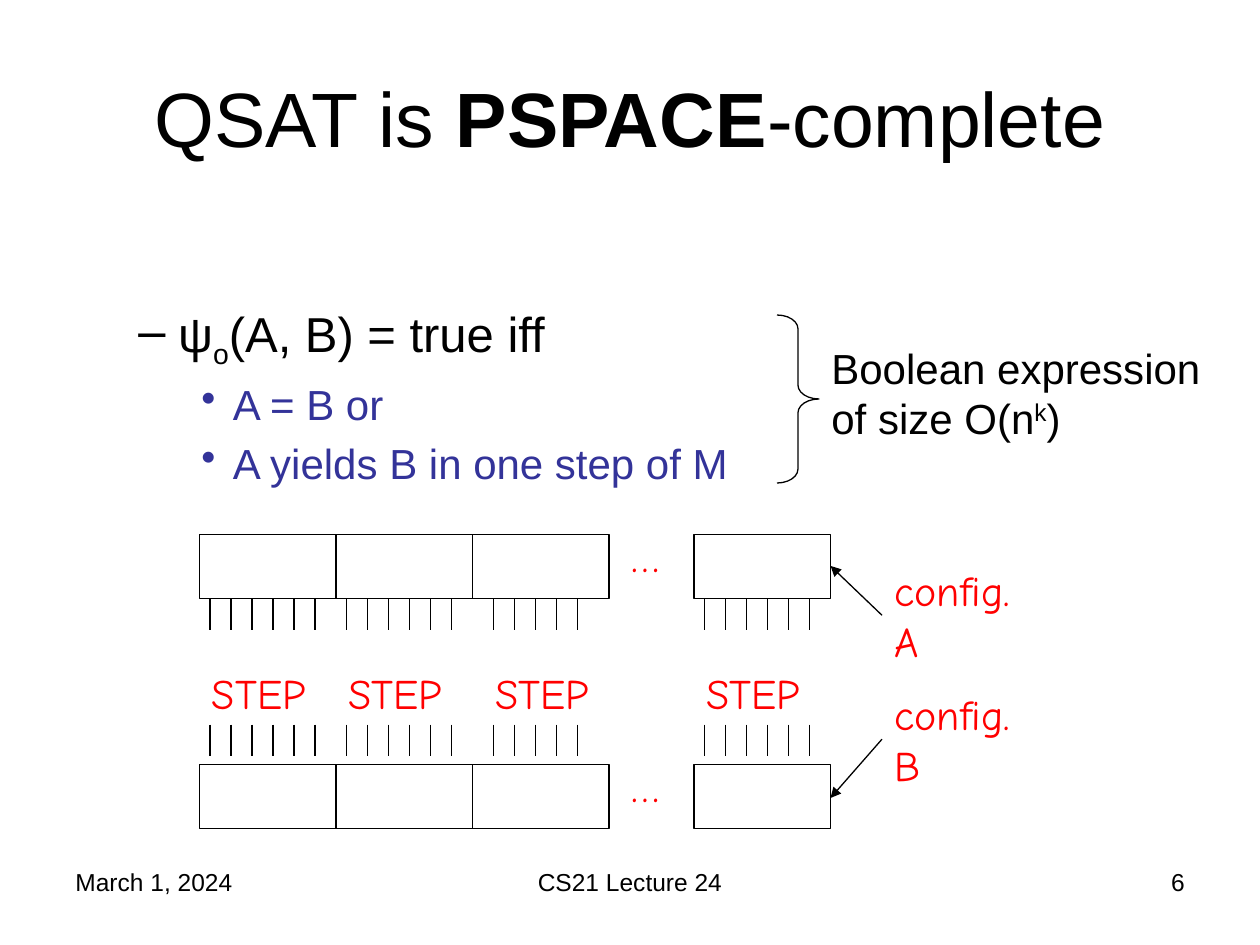
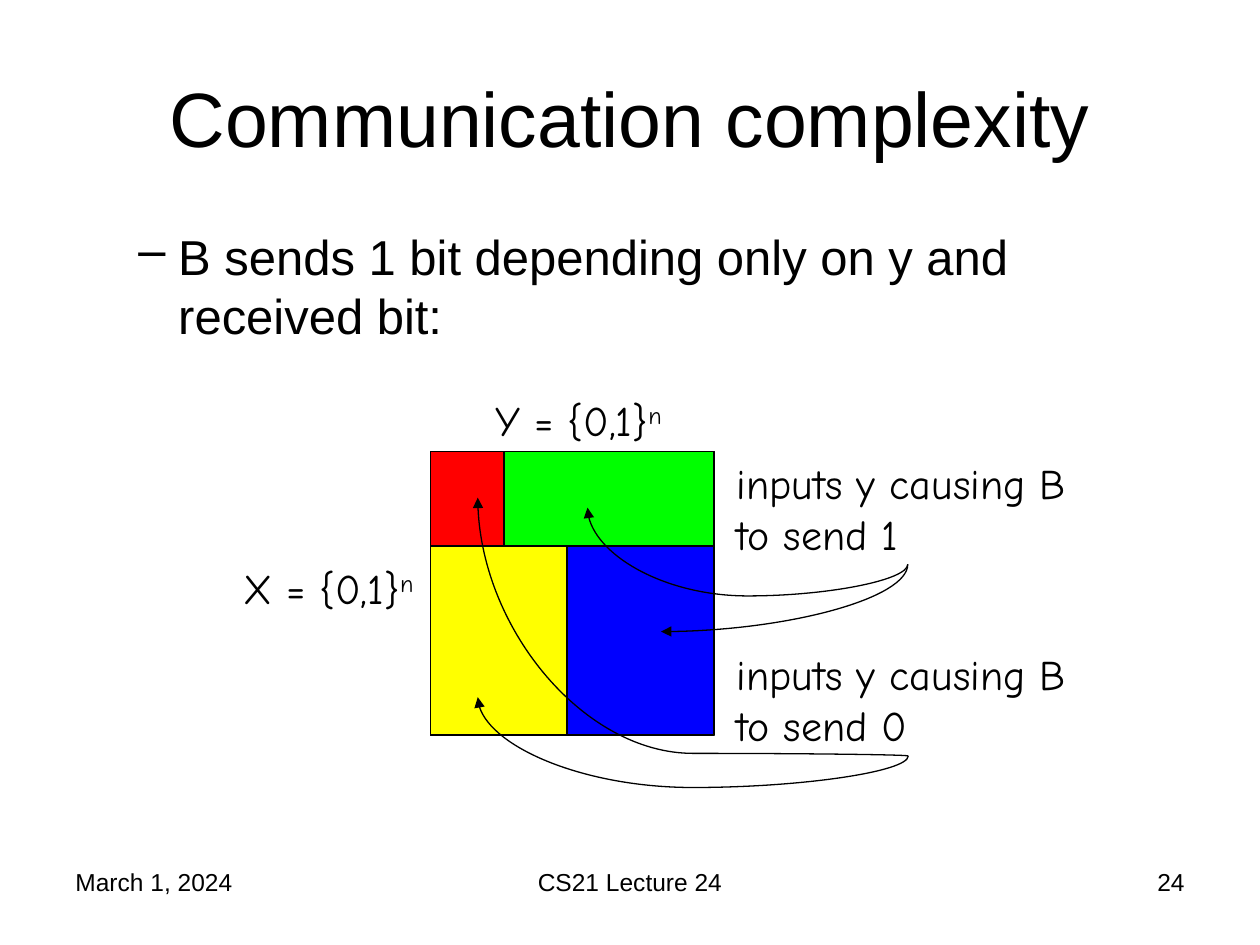
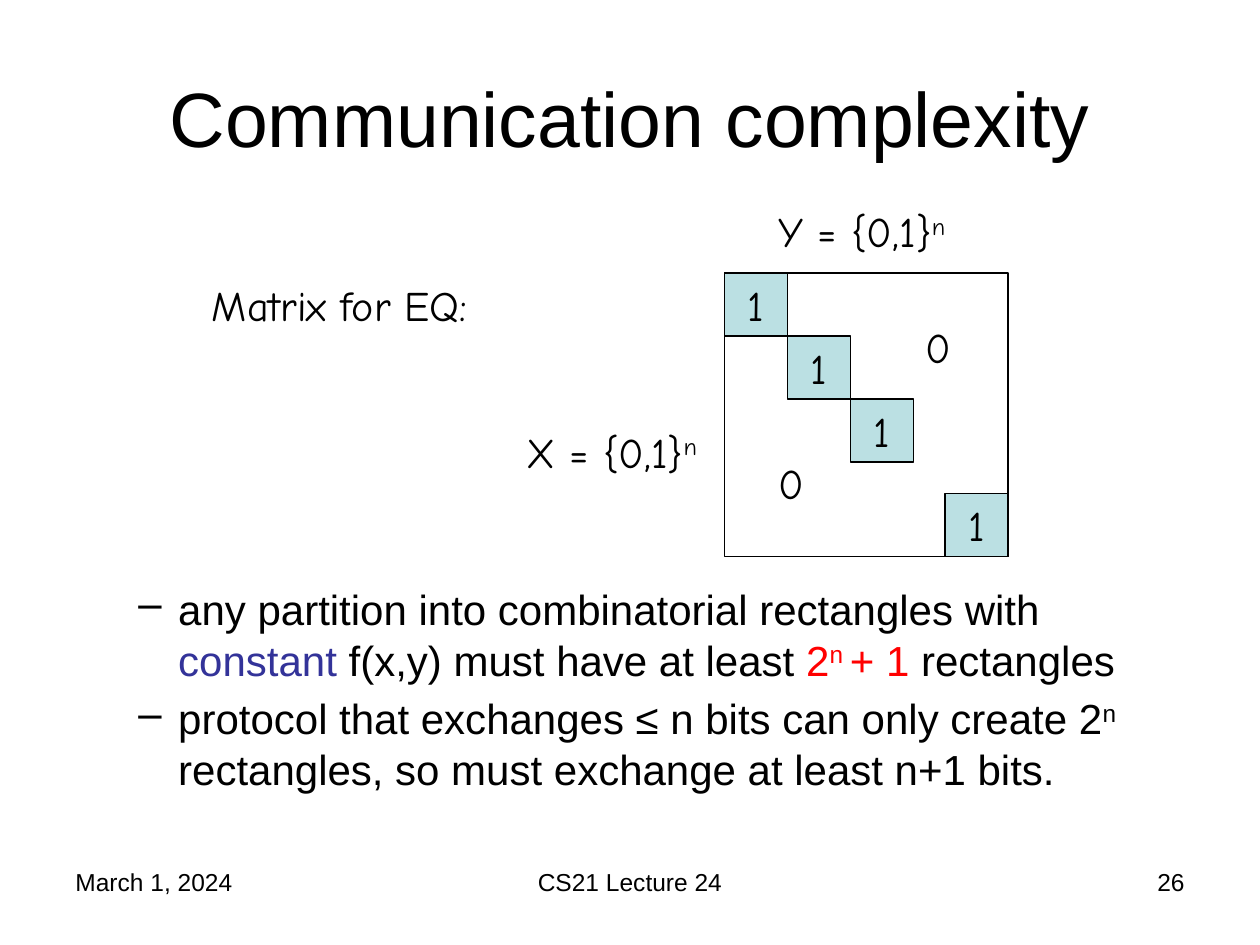
from typing import NamedTuple, Optional

import lxml.etree
import pptx
import pptx.dml.color
import pptx.enum.shapes
import pptx.enum.text
import pptx.oxml.ns
import pptx.util

EMU_PER_PX = 7620
SLIDE_WIDTH, SLIDE_HEIGHT = 1200, 900
TITLE_ONLY_LAYOUT = 5

ARIAL = "Arial"
COMIC = "Comic Neue"
BLACK = "000000"
RED = "FF0000"
GREEN = "00FF00"
YELLOW = "FFFF00"
BLUE = "0000FF"
INDIGO = "333399"
PALE_TEAL = "BBE0E3"

ALIGN = pptx.enum.text.PP_ALIGN
ANCHOR = pptx.enum.text.MSO_ANCHOR
SHAPE = pptx.enum.shapes.MSO_SHAPE
CONNECTOR = pptx.enum.shapes.MSO_CONNECTOR
qn = pptx.oxml.ns.qn


class Frame(NamedTuple):
    left: int
    top: int
    width: int
    height: int


class Point(NamedTuple):
    x: int
    y: int


class Run(NamedTuple):
    text: str
    color: str = BLACK
    bold: bool = False
    baseline: int = 0


class Bullet(NamedTuple):
    mark: str
    margin: int
    hanging: int


class Item(NamedTuple):
    bullet: Bullet
    size: int
    runs: list[Run]


class Footer(NamedTuple):
    frame: Frame
    align: ALIGN
    text: str


class TapeCell(NamedTuple):
    left: int
    step_left: int
    tick_count: int


class Curve(NamedTuple):
    begin: Point
    end: Point
    preset: str
    bend: Optional[int] = None


DASH = Bullet("–", 98, 38)
DOT = Bullet("•", 150, 30)
TITLE_FRAME = Frame(60, 36, 1080, 150)


def px(length: int) -> pptx.util.Emu:
    return pptx.util.Emu(length * EMU_PER_PX)


def rgb(color: str) -> pptx.dml.color.RGBColor:
    return pptx.dml.color.RGBColor.from_string(color)


def write(paragraph, text: str, *, size: int = 24, font: str = ARIAL, color: str = BLACK,
          bold: bool = False, baseline: int = 0) -> None:
    run = paragraph.add_run()
    run.text = text
    run.font.size = pptx.util.Pt(size)
    run.font.name = font
    run.font.bold = bold
    run.font.color.rgb = rgb(color)
    if baseline:
        run._r.get_or_add_rPr().set("baseline", str(baseline * 1000))


def write_runs(paragraph, runs: list[Run], *, size: int = 24, font: str = ARIAL) -> None:
    for run in runs:
        write(paragraph, run.text, size=size, font=font, color=run.color,
              bold=run.bold, baseline=run.baseline)


def add_text_frame(slide, frame: Frame):
    text_frame = slide.shapes.add_textbox(*map(px, frame)).text_frame
    text_frame.word_wrap = True
    return text_frame


def add_label(slide, frame: Frame, runs: list[Run], *, size: int = 24, font: str = COMIC,
              align: ALIGN = ALIGN.LEFT) -> None:
    paragraph = add_text_frame(slide, frame).paragraphs[0]
    paragraph.alignment = align
    write_runs(paragraph, runs, size=size, font=font)


def set_bullet(paragraph, bullet: Bullet) -> None:
    properties = paragraph._p.get_or_add_pPr()
    properties.set("marL", str(px(bullet.margin)))
    properties.set("indent", str(px(-bullet.hanging)))
    lxml.etree.SubElement(properties, qn("a:buChar")).set("char", bullet.mark)


def add_body(slide, frame: Frame, items: list[Item]) -> None:
    text_frame = add_text_frame(slide, frame)
    for index, item in enumerate(items):
        paragraph = text_frame.add_paragraph() if index else text_frame.paragraphs[0]
        if index:
            paragraph.space_before = pptx.util.Pt(item.size * 0.2)
        set_bullet(paragraph, item.bullet)
        write_runs(paragraph, item.runs, size=item.size)


def add_outline(slide, frame: Frame, *, fill: Optional[str] = None, kind: SHAPE = SHAPE.RECTANGLE):
    shape = slide.shapes.add_shape(kind, *map(px, frame))
    shape.shadow.inherit = False
    if fill:
        shape.fill.solid()
        shape.fill.fore_color.rgb = rgb(fill)
    else:
        shape.fill.background()
    shape.line.color.rgb = rgb(BLACK)
    shape.line.width = pptx.util.Pt(0.75)
    return shape


def add_line(slide, begin: Point, end: Point, *, kind: CONNECTOR = CONNECTOR.STRAIGHT,
             arrow: bool = False):
    connector = slide.shapes.add_connector(kind, *map(px, begin), *map(px, end))
    connector.line.color.rgb = rgb(BLACK)
    connector.line.width = pptx.util.Pt(0.75)
    if arrow:
        line = connector.line._get_or_add_ln()
        lxml.etree.SubElement(line, qn("a:tailEnd")).set("type", "triangle")
    lxml.etree.SubElement(connector._element.spPr, qn("a:effectLst"))
    return connector


def add_curve(slide, curve: Curve) -> None:
    begin, end = curve.begin, curve.end
    width, height = abs(end.y - begin.y), abs(end.x - begin.x)
    left = (begin.x + end.x - width) // 2
    top = (begin.y + end.y - height) // 2
    connector = add_line(slide, Point(left, top), Point(left + width, top + height),
                         kind=CONNECTOR.CURVE, arrow=True)
    properties = connector._element.spPr
    transform = properties.find(qn("a:xfrm"))
    upward = end.y < begin.y
    transform.set("rot", str((270 if upward else 90) * 60000))
    if upward:
        transform.set("flipV", "1")
    geometry = properties.find(qn("a:prstGeom"))
    geometry.set("prst", curve.preset)
    if curve.bend is not None:
        guide = lxml.etree.SubElement(geometry.find(qn("a:avLst")), qn("a:gd"))
        guide.set("name", "adj1")
        guide.set("fmla", f"val {curve.bend}")


def add_titled_slide(presentation, title: list[Run], number: int):
    slide = presentation.slides.add_slide(presentation.slide_layouts[TITLE_ONLY_LAYOUT])
    shape = slide.shapes.title
    shape.left, shape.top, shape.width, shape.height = map(px, TITLE_FRAME)
    shape.text_frame.vertical_anchor = ANCHOR.MIDDLE
    paragraph = shape.text_frame.paragraphs[0]
    paragraph.alignment = ALIGN.CENTER
    write_runs(paragraph, title, size=44)
    footers = [
        Footer(Frame(60, 820, 280, 62), ALIGN.LEFT, "March 1, 2024"),
        Footer(Frame(410, 820, 380, 62), ALIGN.CENTER, "CS21 Lecture 24"),
        Footer(Frame(860, 820, 280, 62), ALIGN.RIGHT, str(number)),
    ]
    for footer in footers:
        add_label(slide, footer.frame, [Run(footer.text)], size=14, font=ARIAL, align=footer.align)
    return slide


def add_axis_labels(slide, x_label: Point, y_label: Point) -> None:
    for name, place, width in (("X", x_label, 250), ("Y", y_label, 200)):
        add_label(slide, Frame(*place, width, 60),
                  [Run(f"{name} = {{0,1}}"), Run("n", baseline=30)])


def build_qsat_slide(presentation) -> None:
    title = [Run("QSAT is "), Run("PSPACE", bold=True), Run("-complete")]
    slide = add_titled_slide(presentation, title, 6)
    add_body(slide, Frame(60, 283, 1080, 521), [
        Item(DASH, 28, [Run("ψ"), Run("o", baseline=-25), Run("(A, B) = true iff")]),
        Item(DOT, 24, [Run("A = B or", INDIGO)]),
        Item(DOT, 24, [Run("A yields B in one step of M", INDIGO)]),
    ])
    tape_cells = [TapeCell(190, 190, 6), TapeCell(320, 320, 6),
                  TapeCell(450, 460, 5), TapeCell(661, 661, 6)]
    for tape_top, tick_top in ((509, 570), (728, 690)):
        for cell in tape_cells:
            add_outline(slide, Frame(cell.left, tape_top, 130, 61))
            for index in range(cell.tick_count):
                x = cell.step_left + 10 + 20 * index
                add_line(slide, Point(x, tick_top), Point(x, tick_top + 30))
        add_label(slide, Frame(590, tape_top - 10, 52, 60), [Run("…", RED)])
    for cell in tape_cells:
        add_label(slide, Frame(cell.step_left, 630, 160, 60), [Run("STEP", RED)])
    for name, top, arrow_end in (("A", 532, 539), ("B", 650, 760)):
        add_label(slide, Frame(840, top, 160, 108), [Run(f"config. {name}", RED)])
        add_line(slide, Point(840, top + 54), Point(791, arrow_end), arrow=True)
    brace = add_outline(slide, Frame(740, 300, 40, 160), kind=SHAPE.RIGHT_BRACE)
    brace.adjustments[0] = 0.33
    add_label(slide, Frame(780, 320, 390, 108),
              [Run("Boolean expression of size O(n"), Run("k", baseline=30), Run(")")], font=ARIAL)


def build_protocol_slide(presentation) -> None:
    slide = add_titled_slide(presentation, [Run("Communication complexity")], 24)
    regions = [
        (Frame(410, 430, 70, 90), RED),
        (Frame(480, 430, 200, 90), GREEN),
        (Frame(410, 520, 130, 180), YELLOW),
        (Frame(540, 520, 140, 180), BLUE),
    ]
    for frame, color in regions:
        add_outline(slide, frame, fill=color)
    add_body(slide, Frame(60, 210, 1080, 594), [
        Item(DASH, 28, [Run("B sends 1 bit depending only on y and received bit:")]),
    ])
    add_axis_labels(slide, Point(220, 530), Point(460, 370))
    for bit, top in ((1, 430), (0, 612)):
        add_label(slide, Frame(690, top, 350, 108), [Run(f"inputs y causing B to send {bit}")])
    one_source, zero_source = Point(865, 538), Point(865, 720)
    curves = [
        Curve(one_source, Point(560, 484), "curvedConnector3", -55800),
        Curve(zero_source, Point(455, 474), "curvedConnector3", 1000),
        Curve(one_source, Point(630, 602), "curvedConnector2"),
        Curve(zero_source, Point(455, 664), "curvedConnector3", -53700),
    ]
    for curve in curves:
        add_curve(slide, curve)
    add_outline(slide, Frame(410, 430, 270, 270))


def build_equality_slide(presentation) -> None:
    slide = add_titled_slide(presentation, [Run("Communication complexity")], 26)
    add_body(slide, Frame(60, 550, 1080, 254), [
        Item(DASH, 24, [
            Run("any partition into combinatorial rectangles with "), Run("constant", INDIGO),
            Run(" f(x,y) must have at least "), Run("2", RED), Run("n ", RED, baseline=30),
            Run("+ 1", RED), Run(" rectangles"),
        ]),
        Item(DASH, 24, [
            Run("protocol that exchanges ≤ n bits can only create 2"), Run("n", baseline=30),
            Run(" rectangles, so must exchange at least n+1 bits."),
        ]),
    ])
    matrix = Frame(690, 260, 270, 270)
    add_outline(slide, matrix)
    add_axis_labels(slide, Point(490, 400), Point(730, 190))
    for offset in (0, 60, 120, 210):
        frame = Frame(matrix.left + offset, matrix.top + offset, 60, 60)
        cell = add_outline(slide, frame, fill=PALE_TEAL)
        paragraph = cell.text_frame.paragraphs[0]
        paragraph.alignment = ALIGN.CENTER
        write(paragraph, "1", font=COMIC)
    for left, top in ((730, 430), (870, 300)):
        add_label(slide, Frame(left, top, 70, 60), [Run("0")])
    add_label(slide, Frame(190, 260, 310, 60), [Run("Matrix for EQ:")])


def main() -> None:
    presentation = pptx.Presentation()
    presentation.slide_width = px(SLIDE_WIDTH)
    presentation.slide_height = px(SLIDE_HEIGHT)
    build_qsat_slide(presentation)
    build_protocol_slide(presentation)
    build_equality_slide(presentation)
    presentation.save("out.pptx")


if __name__ == "__main__":
    main()
